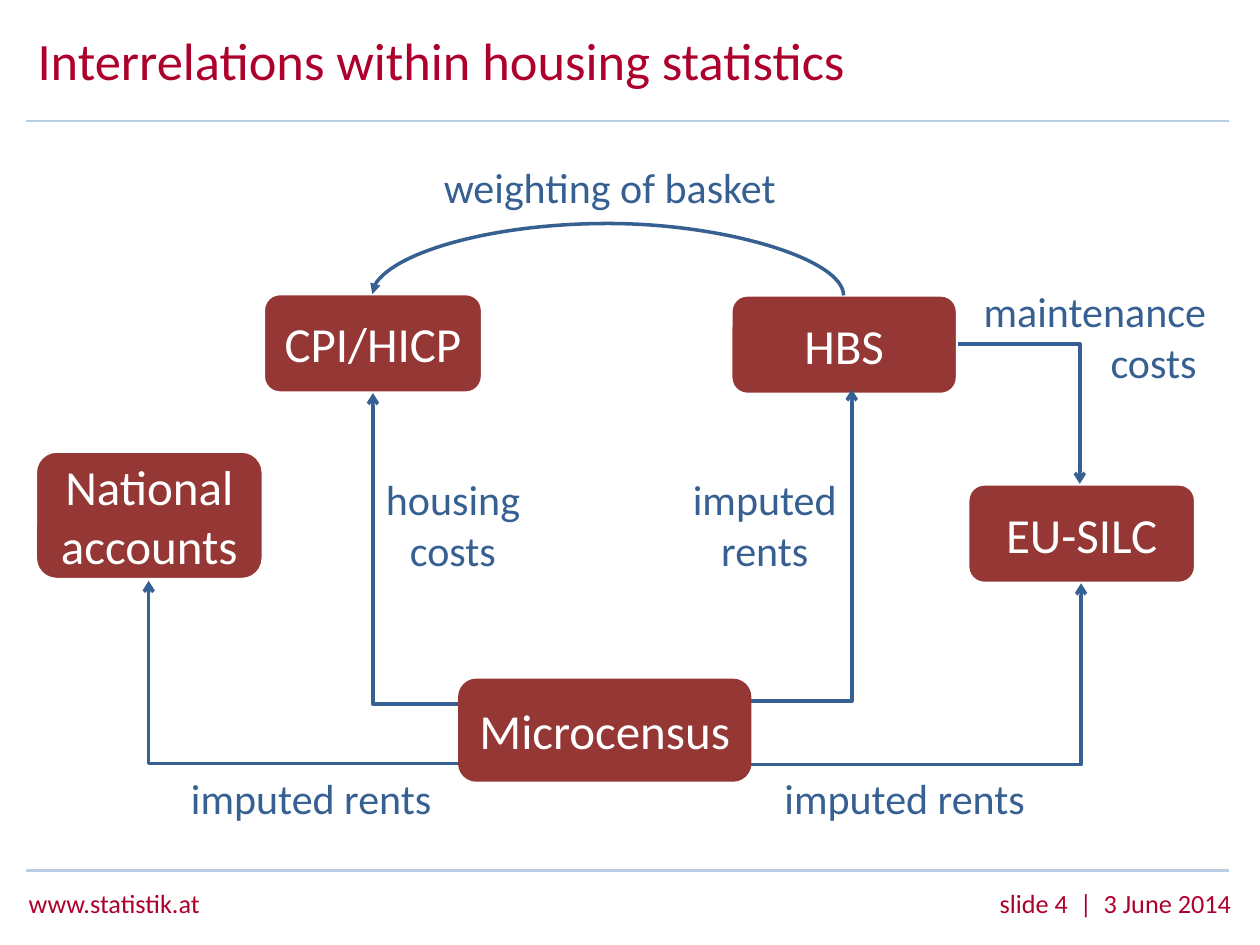
from pptx import Presentation
from pptx.dml.color import RGBColor
from pptx.enum.shapes import MSO_CONNECTOR, MSO_SHAPE
from pptx.enum.text import MSO_ANCHOR, PP_ALIGN
from pptx.oxml.ns import qn
from pptx.util import Inches, Pt
from lxml.etree import SubElement

RED = RGBColor(0xAE, 0x00, 0x2C)
BRICK = RGBColor(0x95, 0x37, 0x35)
BLUE = RGBColor(0x37, 0x60, 0x92)
PALE = RGBColor(0xB9, 0xCD, 0xE5)
WHITE = RGBColor(0xFF, 0xFF, 0xFF)

LEFT, MID, RIGHT = PP_ALIGN.LEFT, PP_ALIGN.CENTER, PP_ALIGN.RIGHT
HEAD = {"name": "Calibri", "size": Pt(30)}
FOOT = {"name": "Calibri", "size": Pt(15)}
NODE = {"name": "Calibri", "size": Pt(28)}
NOTE = {"name": "Calibri", "size": Pt(24)}


def write(shape, text, form, color, align, anchor):
    frame = shape.text_frame
    frame.word_wrap = True
    frame.vertical_anchor = anchor
    para = frame.paragraphs[0]
    para.alignment = align
    run = para.add_run()
    run.text = text
    for key, value in form.items():
        setattr(run.font, key, value)
    run.font.color.rgb = color
    return para


def add_text(slide, text, box, form, color, align=MID, anchor=MSO_ANCHOR.TOP):
    shape = slide.shapes.add_textbox(*map(Inches, box))
    return write(shape, text, form, color, align, anchor)


def add_node(slide, text, box, edge=WHITE):
    shape = slide.shapes.add_shape(MSO_SHAPE.ROUNDED_RECTANGLE, *map(Inches, box))
    shape.shadow.inherit = False
    shape.fill.solid()
    shape.fill.fore_color.rgb = BRICK
    shape.line.color.rgb = edge
    shape.line.width = Pt(2)
    write(shape, text, NODE, WHITE, MID, MSO_ANCHOR.MIDDLE)


def add_line(slide, box, color, width, kind=MSO_CONNECTOR.STRAIGHT):
    x, y, w, h = box
    line = slide.shapes.add_connector(kind, *map(Inches, (x, y, x + w, y + h)))
    line.line.color.rgb = color
    line.line.width = Pt(width)
    SubElement(line._element.spPr, qn("a:effectLst"))
    return line


def add_arrow(slide, preset, box, turn=0, flip="", bend=None, tip="arrow"):
    """Bent or curved arrow; box is the frame before the turn in degrees."""
    line = add_line(slide, box, BLUE, 2, MSO_CONNECTOR.ELBOW)
    props = line._element.spPr
    frame = props.find(qn("a:xfrm"))
    frame.set("rot", str(turn * 60000))
    for axis in flip:
        frame.set("flip" + axis, "1")
    shape = props.find(qn("a:prstGeom"))
    shape.set("prst", preset)
    if bend is not None:
        guides = shape.find(qn("a:avLst"))
        if guides is None:
            guides = SubElement(shape, qn("a:avLst"))
        SubElement(guides, qn("a:gd"), name="adj1", fmla=f"val {round(bend * 100000)}")
    SubElement(props.find(qn("a:ln")), qn("a:tailEnd"), type=tip)


def main():
    deck = Presentation()
    deck.slide_width, deck.slide_height = Inches(10), Inches(7.5)
    slide = deck.slides.add_slide(deck.slide_layouts[6])

    # Footer and rules
    add_text(slide, "www.statistik.at", (0.13, 6.99, 2.27, 0.35), FOOT, RED, LEFT)
    add_text(slide, "slide 4  |  3 June 2014", (6.25, 6.99, 3.62, 0.35), FOOT, RED, RIGHT)
    for y in (0.96, 6.91):
        add_line(slide, (0.21, y, 9.54, 0), PALE, 1.5)

    # Title
    title = add_text(slide, "Interrelations within housing statistics",
                     (0.2, 0.25, 7.63, 0.53), HEAD, RED, LEFT, MSO_ANCHOR.MIDDLE)
    title.line_spacing = Pt(30)

    # Statistics fed by other sources
    for text, box in (
        ("HBS", (5.8, 2.34, 1.8, 0.79)),
        ("National accounts", (0.28, 3.58, 1.81, 1.02)),
        ("CPI/HICP", (2.09, 2.33, 1.74, 0.79)),
        ("EU-SILC", (7.68, 3.84, 1.81, 0.79)),
    ):
        add_node(slide, text, box)

    # Arrows out of the microcensus, then its node on top
    add_arrow(slide, "bentConnector2", (1.18, 4.61, 3.03, 1.45), 180)
    add_arrow(slide, "bentConnector2", (5.56, 4.63, 3.02, 1.44), 0, "V")
    add_arrow(slide, "bentConnector3", (2.17, 3.91, 2.68, 1.1), 270, "V", 0.08)
    add_arrow(slide, "bentConnector3", (4.88, 3.76, 2.55, 1.21), 90, "HV", 0.03)
    add_node(slide, "Microcensus", (3.65, 5.4, 2.3, 0.79), BRICK)

    # Arrows out of HBS
    add_arrow(slide, "curvedConnector3", (4.82, 0.47, 0.01, 3.74), 270, "V", 58, "triangle")
    add_arrow(slide, "bentConnector2", (7.6, 2.73, 0.97, 1.11))

    # Arrow labels
    for text, box, align in (
        ("imputed rents", (1.03, 6.08, 2.88, 0.5), MID),
        ("imputed rents", (5.74, 6.08, 2.88, 0.5), MID),
        ("imputed rents", (5.39, 3.71, 1.36, 0.91), MID),
        ("housing costs", (2.95, 3.71, 1.29, 0.91), MID),
        ("weighting of basket", (3.4, 1.23, 2.88, 0.5), MID),
        ("maintenance costs ", (7.52, 2.22, 2.15, 0.91), RIGHT),
    ):
        add_text(slide, text, box, NOTE, BLUE, align)

    deck.save("out.pptx")


if __name__ == "__main__":
    main()
